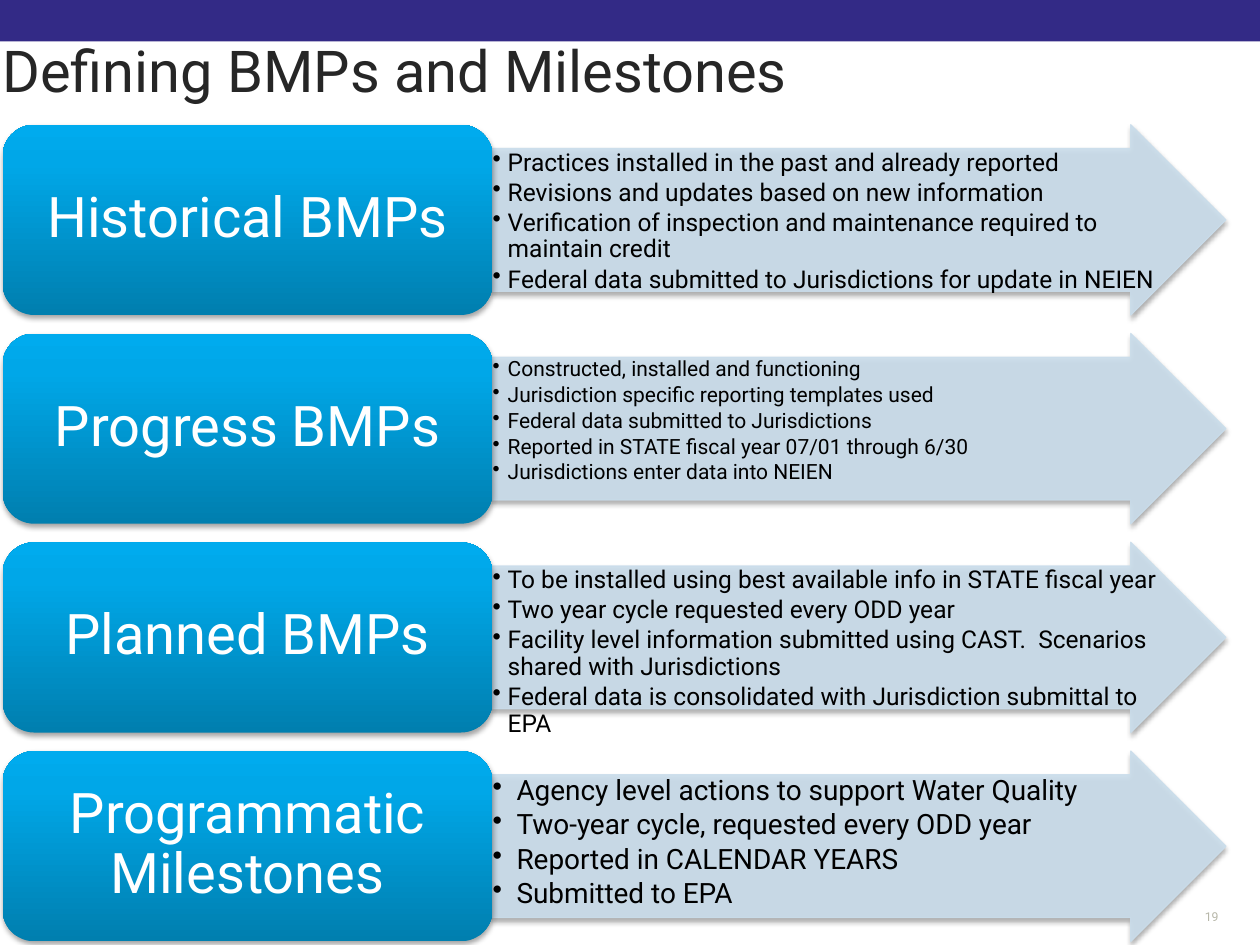
from lxml import etree
from pptx import Presentation
from pptx.dml.color import RGBColor
from pptx.enum.shapes import MSO_SHAPE
from pptx.enum.text import MSO_ANCHOR, PP_ALIGN
from pptx.oxml.ns import qn
from pptx.util import Inches, Pt

RECT, ROUND_RECT = MSO_SHAPE.RECTANGLE, MSO_SHAPE.ROUNDED_RECTANGLE
RIGHT_ARROW = MSO_SHAPE.RIGHT_ARROW
TOP, MIDDLE = MSO_ANCHOR.TOP, MSO_ANCHOR.MIDDLE
LEFT, CENTER, RIGHT = PP_ALIGN.LEFT, PP_ALIGN.CENTER, PP_ALIGN.RIGHT

FONT = "Roboto"
INDIGO = RGBColor(0x33, 0x2A, 0x86)
PALE_BLUE = RGBColor(0xCA, 0xDD, 0xEB)
DARK_BLUE = RGBColor(0x00, 0x7F, 0xAF)
MID_BLUE = RGBColor(0x00, 0xA7, 0xE8)
BRIGHT_BLUE = RGBColor(0x00, 0xAB, 0xEE)
CHARCOAL = RGBColor(0x26, 0x26, 0x26)
GREY = RGBColor(0xB7, 0xB7, 0xA9)
BLACK = RGBColor(0, 0, 0)
WHITE = RGBColor(255, 255, 255)
LABEL_STOPS = [(0, DARK_BLUE), (80, MID_BLUE), (100, BRIGHT_BLUE)]

FIRST_TOP, ROW_STEP, ROW_HEIGHT = 0.99, 1.657, 1.51

# label, bullet size, bullet indent, bullets
ROWS = [
    ("Historical BMPs", 14, 0.12, [
        "Practices installed in the past and already reported",
        "Revisions and updates based on new information",
        "Verification of inspection and maintenance required to maintain credit",
        "Federal data submitted to Jurisdictions for update in NEIEN"]),
    ("Progress BMPs", 12, 0.12, [
        "Constructed, installed and functioning",
        "Jurisdiction specific reporting templates used",
        "Federal data submitted to Jurisdictions",
        "Reported in STATE fiscal year 07/01 through 6/30",
        "Jurisdictions enter data into NEIEN"]),
    ("Planned BMPs", 14, 0.12, [
        "To be installed using best available info in STATE fiscal year",
        "Two year cycle requested every ODD year",
        "Facility level information submitted using CAST.  Scenarios shared with Jurisdictions",
        "Federal data is consolidated with Jurisdiction submittal to EPA"]),
    ("Programmatic Milestones", 16, 0.19, [
        "Agency level actions to support Water Quality",
        "Two-year cycle, requested every ODD year",
        "Reported in CALENDAR YEARS",
        "Submitted to EPA"]),
]


def add_xml(parent, tag, **attrs):
    el = etree.SubElement(parent, qn(tag))
    for name, value in attrs.items():
        el.set(name, str(value))
    return el


class SlideBuilder:
    def __init__(self, slide, font):
        self.slide = slide
        self.font = font

    def shape(self, kind, x, y, w, h):
        sp = self.slide.shapes.add_shape(kind, Inches(x), Inches(y), Inches(w), Inches(h))
        sp.shadow.inherit = False
        sp.line.fill.background()
        return sp

    def bar(self, x, y, w, h, color):
        sp = self.shape(RECT, x, y, w, h)
        sp.fill.solid()
        sp.fill.fore_color.rgb = color

    def drop_shadow(self, sp):
        effects = sp._element.spPr.find(qn("a:effectLst"))
        shadow = add_xml(effects, "a:outerShdw", blurRad=Pt(3.1), dist=Pt(1.8),
                         dir=5400000, rotWithShape=0)
        add_xml(add_xml(shadow, "a:srgbClr", val=BLACK), "a:alpha", val=35000)

    def arrow(self, x, y, w, h):
        sp = self.shape(RIGHT_ARROW, x, y, w, h)
        sp.adjustments[0] = 0.75
        sp.adjustments[1] = 0.5
        sp.line.width = Pt(0.75)
        for fill in (sp.fill, sp.line.fill):
            fill.solid()
            fill.fore_color.rgb = PALE_BLUE
        for color in list(sp._element.spPr.iter(qn("a:srgbClr"))):
            add_xml(color, "a:alpha", val=90000)
        self.drop_shadow(sp)

    def label_box(self, x, y, w, h):
        """Rounded box with a gradient that is darkest at the bottom."""
        sp = self.shape(ROUND_RECT, x, y, w, h)
        sp.adjustments[0] = 0.167
        sp.fill.gradient()
        sp.fill.gradient_angle = 90
        stops = sp._element.spPr.find(".//" + qn("a:gsLst"))
        for stop in list(stops):
            stops.remove(stop)
        for percent, color in LABEL_STOPS:
            add_xml(add_xml(stops, "a:gs", pos=percent * 1000), "a:srgbClr", val=color)
        self.drop_shadow(sp)

    def text(self, x, y, w, h, lines, size, color, inset=(0, 0.03),
             align=LEFT, anchor=TOP, spacing=None):
        sp = self.slide.shapes.add_textbox(Inches(x), Inches(y), Inches(w), Inches(h))
        tf = sp.text_frame
        tf.word_wrap = True
        tf.vertical_anchor = anchor
        tf.margin_left = tf.margin_right = Inches(inset[0])
        tf.margin_top = tf.margin_bottom = Inches(inset[1])
        tf.text = "\n".join(lines)
        for p in tf.paragraphs:
            p.alignment = align
            p.line_spacing = spacing
            for r in p.runs:
                r.font.name = self.font
                r.font.size = Pt(size)
                r.font.color.rgb = color
        return tf

    def bullets(self, x, y, w, h, lines, size, indent):
        tf = self.text(x, y, w, h, lines, size, BLACK, inset=(0.01, 0.01), spacing=0.9)
        for i, p in enumerate(tf.paragraphs):
            p.level = 1
            p.space_before = Pt(size * 0.15 if i else 0)
            pPr = p._p.get_or_add_pPr()
            pPr.set("marL", str(Inches(indent)))
            pPr.set("indent", str(-Inches(indent)))
            add_xml(add_xml(pPr, "a:buClr"), "a:srgbClr", val=BLACK)
            add_xml(pPr, "a:buChar", char="•")


def main():
    prs = Presentation()
    prs.slide_width, prs.slide_height = Inches(10), Inches(7.5)
    s = SlideBuilder(prs.slides.add_slide(prs.slide_layouts[6]), FONT)

    s.bar(0, 0, 10, 0.33, INDIGO)
    s.text(9.25, 7.15, 0.42, 0.25, ["19"], 7, GREY, align=RIGHT, anchor=MIDDLE)
    for i, (label, size, indent, lines) in enumerate(ROWS):
        y = FIRST_TOP + i * ROW_STEP
        s.arrow(3.9, y, 5.83, ROW_HEIGHT)
        s.bullets(3.9, y + 0.19, 5.3, 1.13, lines, size, indent)
        s.label_box(0.02, y, 3.89, ROW_HEIGHT)
        s.text(0.09, y + 0.07, 3.75, 1.36, [label], 32, WHITE, inset=(0.16, 0.08),
               align=CENTER, anchor=MIDDLE, spacing=0.9)
    s.text(0.02, 0.33, 9.98, 1, ["Defining BMPs and Milestones"], 33, CHARCOAL, spacing=0.85)

    prs.save("out.pptx")


if __name__ == "__main__":
    main()
